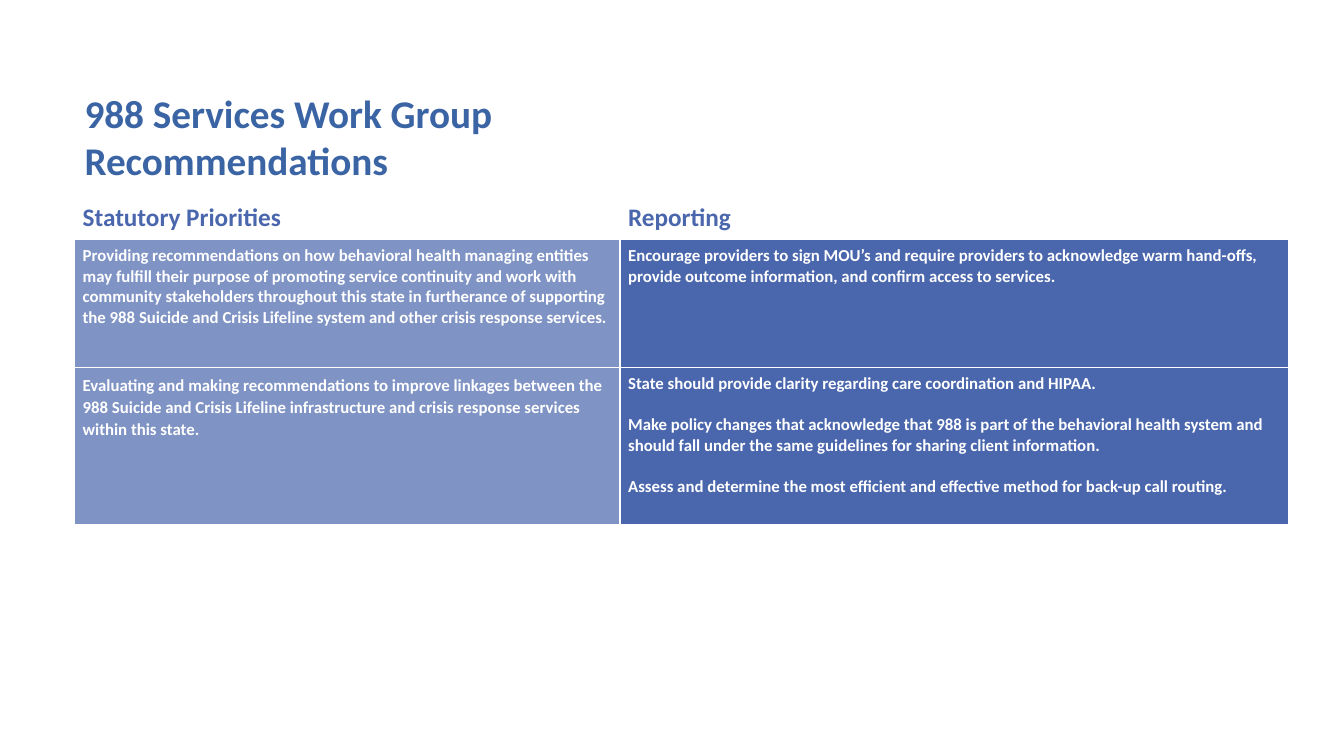
import pptx
import pptx.util
import pptx.dml.color
import pptx.enum.text
import pptx.oxml
import pptx.oxml.ns
from lxml import etree

Inches, Pt = pptx.util.Inches, pptx.util.Pt
ANCHOR = pptx.enum.text.MSO_ANCHOR

# Content: each cell is a list of paragraphs
TITLE = "988 Services Work Group Recommendations"
HEADINGS = (["Statutory Priorities"], ["Reporting"])
RECOMMENDATIONS = [
    (
        ["Providing recommendations on how behavioral health managing entities may fulfill "
         "their purpose of promoting service continuity and work with community stakeholders "
         "throughout this state in furtherance of supporting the 988 Suicide and Crisis "
         "Lifeline system and other crisis response services."],
        ["Encourage providers to sign MOU’s and require providers to acknowledge warm "
         "hand-offs, provide outcome information, and confirm access to services."],
    ),
    (
        ["Evaluating and making recommendations to improve linkages between the 988 Suicide "
         "and Crisis Lifeline infrastructure and crisis response services within this state."],
        ["State should provide clarity regarding care coordination and HIPAA.",
         "Make policy changes that acknowledge that 988 is part of the behavioral health "
         "system and should fall under the same guidelines for sharing client information.",
         "Assess and determine the most efficient and effective method for back-up call "
         "routing."],
    ),
]

THEME = {
    "font": "Calibri",
    "title": "3A64A3", "blue": "4A66AC", "white": "FFFFFF",
    "title_size": 28, "heading_size": 18, "body_size": 12,
    "paragraph_gap": 14.65, "border_width": 1, "priority_opacity": 70,
}

# Layout in inches
LEFT, TITLE_TOP, TABLE_TOP = 0.74, 0.84, 1.95
TITLE_WIDTH, TITLE_HEIGHT = 7.09, 0.57
COLUMN_WIDTHS = (5.41, 6.63)
ROW_HEIGHTS = (0.43, 1.27, 1.55)
CELL_MARGINS = {"left": 0.08, "top": 0.06, "right": 0.02, "bottom": 0.06}


def rgb(name):
    return pptx.dml.color.RGBColor.from_string(THEME[name])


def write(frame, paragraphs, *, size, color, gap=0, line_spacing=None):
    frame.word_wrap = True
    for index, text in enumerate(paragraphs):
        paragraph = frame.paragraphs[0] if index == 0 else frame.add_paragraph()
        paragraph.space_before = Pt(gap if index else 0)
        if line_spacing:
            paragraph.line_spacing = line_spacing
        run = paragraph.add_run()
        run.text = text
        run.font.name = THEME["font"]
        run.font.size = Pt(THEME[size])
        run.font.bold = True
        run.font.color.rgb = rgb(color)


def fill_cell(cell, color, opacity=100):
    cell.fill.solid()
    cell.fill.fore_color.rgb = rgb(color)
    if opacity < 100:
        srgb = next(cell._tc.tcPr.iter(pptx.oxml.ns.qn("a:srgbClr")))
        etree.SubElement(srgb, pptx.oxml.ns.qn("a:alpha"), val=str(opacity * 1000))


def add_borders(cell, sides):
    for position, side in enumerate(sides):
        line = pptx.oxml.parse_xml(
            f'<a:ln{side} {pptx.oxml.ns.nsdecls("a")} w="{Pt(THEME["border_width"])}">'
            f'<a:solidFill><a:srgbClr val="{THEME["white"]}"/></a:solidFill></a:ln{side}>')
        cell._tc.tcPr.insert(position, line)


def main():
    deck = pptx.Presentation()
    deck.slide_width, deck.slide_height = Inches(13.33), Inches(7.5)
    slide = deck.slides.add_slide(deck.slide_layouts[6])

    # Recommendations table
    rows = [HEADINGS, *RECOMMENDATIONS]
    table = slide.shapes.add_table(
        len(rows), len(HEADINGS), Inches(LEFT), Inches(TABLE_TOP),
        Inches(sum(COLUMN_WIDTHS)), Inches(sum(ROW_HEIGHTS))).table
    table.first_row = table.horz_banding = False
    for column, width in zip(table.columns, COLUMN_WIDTHS):
        column.width = Inches(width)
    for row, height in zip(table.rows, ROW_HEIGHTS):
        row.height = Inches(height)

    for r, row in enumerate(rows):
        for c, paragraphs in enumerate(row):
            cell = table.cell(r, c)
            for side, margin in CELL_MARGINS.items():
                setattr(cell, f"margin_{side}", Inches(margin))
            if r == 0:
                cell.vertical_anchor = ANCHOR.MIDDLE
                fill_cell(cell, "white")
                write(cell.text_frame, paragraphs, size="heading_size", color="blue")
                continue
            is_priority, is_last = c == 0, r == len(rows) - 1
            fill_cell(cell, "blue", THEME["priority_opacity"] if is_priority else 100)
            add_borders(cell, ("R" if is_priority else "L") + ("T" if is_last else "B"))
            write(cell.text_frame, paragraphs, size="body_size", color="white",
                  gap=THEME["paragraph_gap"],
                  line_spacing=1.07 if is_priority and is_last else None)

    # Title
    title = slide.shapes.add_textbox(
        Inches(LEFT), Inches(TITLE_TOP), Inches(TITLE_WIDTH), Inches(TITLE_HEIGHT))
    write(title.text_frame, [TITLE], size="title_size", color="title")

    deck.save("out.pptx")


if __name__ == "__main__":
    main()
